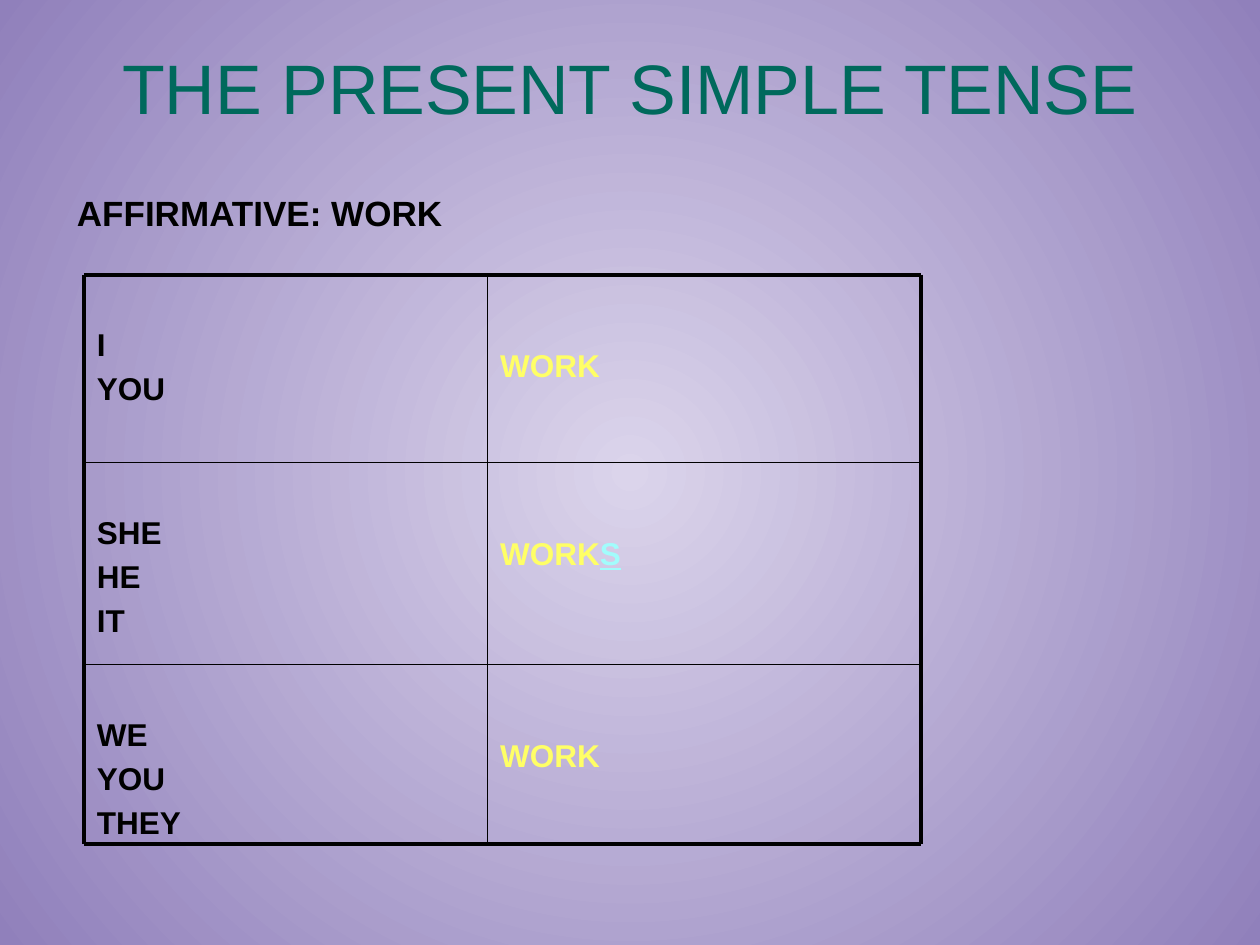
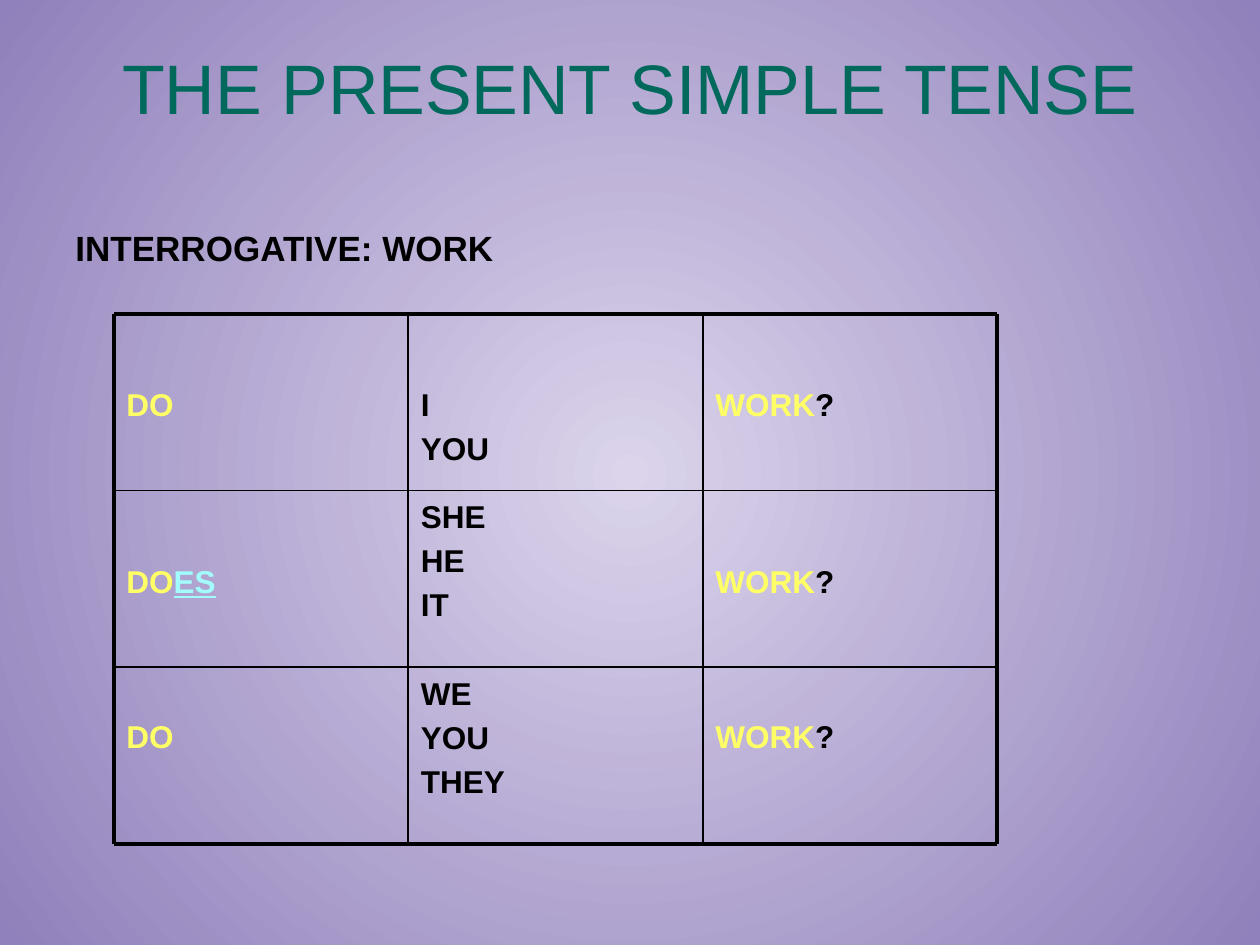
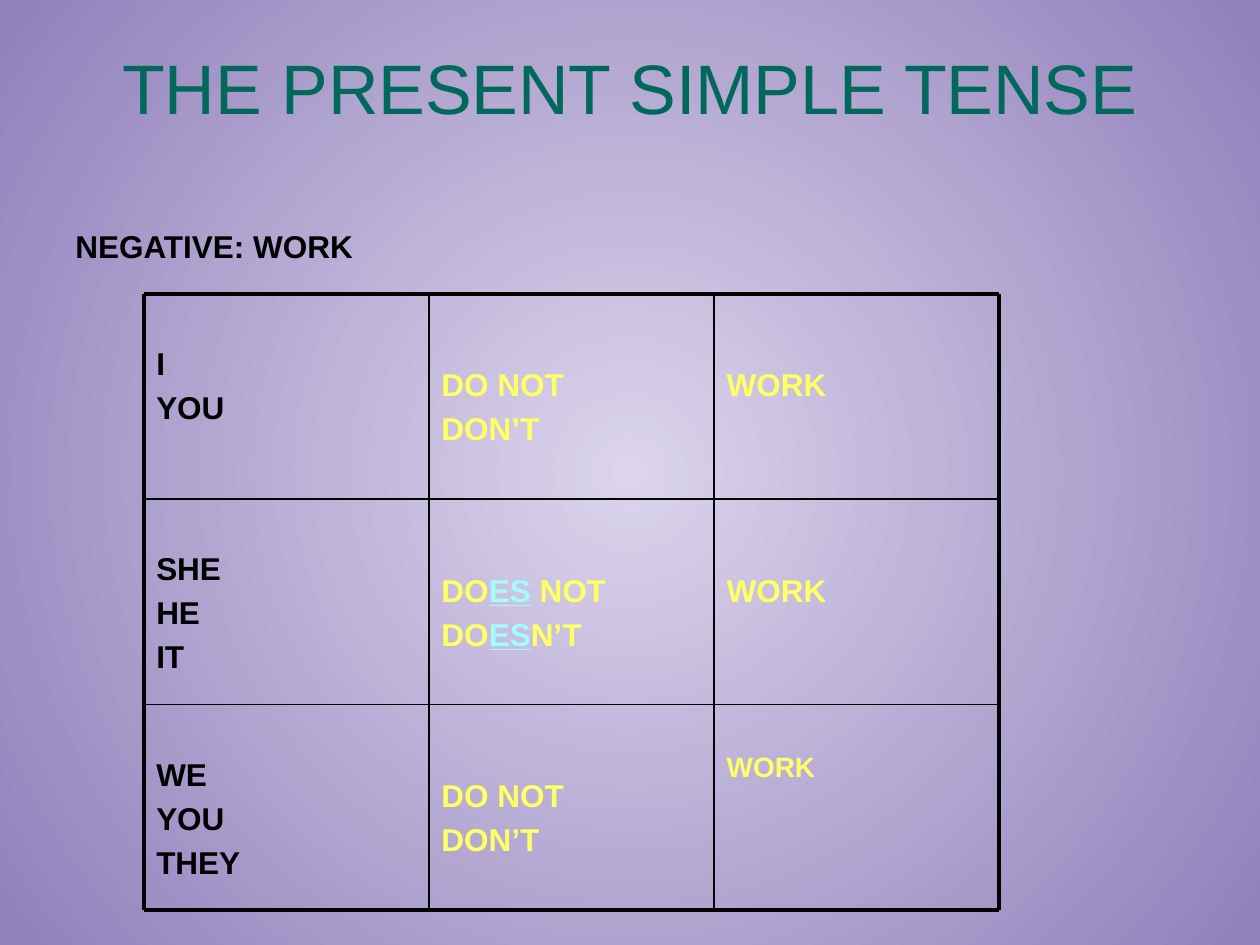
"""Build three slides on the present simple tense, each with one table of verb forms."""
from itertools import accumulate

from pptx import Presentation
from pptx.dml.color import RGBColor
from pptx.enum import shapes, text
from pptx.oxml import ns, xmlchemy
from pptx.util import Pt

COLOURS = {
    "title": "00695C", "subject": "000000", "verb": "FFFF66", "ending": "A2FCFC",
    "rule": "000000", "centre": "DBD4EB", "edge": "9080BB",
}
FONT = "Arial"
TITLE = "THE PRESENT SIMPLE TENSE"
TITLE_BOX = (36, 21.6, 648, 90)
OUTER, INNER = 2.25, 1
LINE_GAP = 5
TOP_INSET = {"top": 5.5, "small": 27.3, "middle": 30.3, "low": 42.4}


def subjects(inset, *names):
    return inset, 18, [[(name, "subject")] for name in names]


def verbs(inset, *lines, size=18):
    return inset, size, [[(line, "verb")] if isinstance(line, str) else line for line in lines]


QUESTION = [("WORK", "verb"), ("?", "subject")]
DOES = [("DO", "verb"), ("ES", "ending")]
WORKS = [("WORK", "verb"), ("S", "ending")]

I_YOU = ("I", "YOU")
SHE_HE_IT = ("SHE", "HE", "IT")
WE_YOU_THEY = ("WE", "YOU", "THEY")

SLIDES = [
    {
        "heading": "AFFIRMATIVE: WORK", "heading_size": 20,
        "heading_box": (36.9, 105.8, 316.8, 376.6),
        "origin": (48.2, 157), "columns": [230.4, 247.7], "rows": [107.3, 115.5, 102.6],
        "cells": [
            [subjects("middle", *I_YOU), verbs("low", "WORK")],
            [subjects("middle", *SHE_HE_IT), verbs("low", WORKS)],
            [subjects("middle", *WE_YOU_THEY), verbs("low", "WORK")],
        ],
    },
    {
        "heading": "INTERROGATIVE: WORK", "heading_size": 20,
        "heading_box": (36, 126, 318.2, 356.4),
        "origin": (65, 179.3), "columns": [168.3] * 3, "rows": [101] * 3,
        "cells": [
            [verbs("low", "DO"), subjects("low", *I_YOU), verbs("low", QUESTION)],
            [verbs("low", DOES), subjects("top", *SHE_HE_IT), verbs("low", QUESTION)],
            [verbs("middle", "DO"), subjects("top", *WE_YOU_THEY), verbs("middle", QUESTION)],
        ],
    },
    {
        "heading": "NEGATIVE: WORK", "heading_size": 18,
        "heading_box": (36, 126, 318.2, 356.4),
        "origin": (82.1, 168), "columns": [163] * 3, "rows": [117.3] * 3,
        "cells": [
            [subjects("middle", *I_YOU), verbs("low", "DO NOT", "DON’T"), verbs("low", "WORK")],
            [subjects("middle", *SHE_HE_IT),
             verbs("low", DOES + [(" NOT", "verb")], DOES + [("N’T", "verb")]),
             verbs("low", "WORK")],
            [subjects("middle", *WE_YOU_THEY), verbs("low", "DO NOT", "DON’T"),
             verbs("small", "WORK", size=16)],
        ],
    },
]


def apply(target, **values):
    for key, value in values.items():
        setattr(target, key, value)


def place(shape, box):
    left, top, width, height = map(Pt, box)
    apply(shape, left=left, top=top, width=width, height=height)


def write(frame, lines, size, bold=True, align=text.PP_ALIGN.LEFT):
    for number, runs in enumerate(lines):
        paragraph = frame.add_paragraph() if number else frame.paragraphs[0]
        paragraph.alignment = align
        if number:
            paragraph.space_before = Pt(LINE_GAP)
        for words, role in runs:
            run = paragraph.add_run()
            run.text = words
            apply(run.font, name=FONT, size=Pt(size), bold=bold, underline=role == "ending")
            run.font.color.rgb = RGBColor.from_string(COLOURS[role])


def child(parent, tag, **attributes):
    element = xmlchemy.OxmlElement(tag)
    for key, value in attributes.items():
        element.set(key, str(value))
    parent.append(element)
    return element


def paint_background(master):
    fill = master.background.fill
    fill.gradient()
    for stop, role in zip(fill.gradient_stops, ("centre", "edge")):
        stop.color.rgb = RGBColor.from_string(COLOURS[role])
    linear = next(master.element.iter(ns.qn("a:lin")))
    gradient = linear.getparent()
    gradient.remove(linear)
    circle = child(gradient, "a:path", path="circle")
    child(circle, "a:fillToRect", l=50000, t=50000, r=50000, b=50000)


def clear_borders(cell):
    properties = cell._tc.get_or_add_tcPr()
    for side in "LRTB":
        child(child(properties, f"a:ln{side}", w=0), "a:noFill")


def add_forms(slide, content):
    cells, widths, heights = (content[key] for key in ("cells", "columns", "rows"))
    box = (*content["origin"], sum(widths), sum(heights))
    forms = slide.shapes.add_table(len(heights), len(widths), *map(Pt, box)).table
    apply(forms, first_row=False, horz_banding=False)
    for column, width in zip(forms.columns, widths):
        column.width = Pt(width)
    for row, height in zip(forms.rows, heights):
        row.height = Pt(height)
    for r, row in enumerate(cells):
        for c, (inset, size, lines) in enumerate(row):
            cell = forms.cell(r, c)
            apply(cell, margin_left=Pt(7.2), margin_right=Pt(7.2), margin_bottom=0,
                  margin_top=Pt(TOP_INSET[inset]), vertical_anchor=text.MSO_ANCHOR.TOP)
            clear_borders(cell)
            cell.fill.background()
            write(cell.text_frame, lines, size)


def add_rule(slide, start, end, weight):
    rule = slide.shapes.add_connector(shapes.MSO_CONNECTOR.STRAIGHT, *map(Pt, start + end))
    rule.line.width = Pt(weight)
    rule.line.color.rgb = RGBColor.from_string(COLOURS["rule"])
    child(rule._element.spPr, "a:effectLst")


def add_rules(slide, content):
    left, top = content["origin"]
    xs = list(accumulate(content["columns"], initial=left))
    ys = list(accumulate(content["rows"], initial=top))
    for y in ys:
        add_rule(slide, (xs[0], y), (xs[-1], y), OUTER if y in (ys[0], ys[-1]) else INNER)
    for x in xs:
        add_rule(slide, (x, ys[0]), (x, ys[-1]), OUTER if x in (xs[0], xs[-1]) else INNER)


def add_slide(deck, content):
    slide = deck.slides.add_slide(deck.slide_layouts[5])
    title = slide.shapes.title
    place(title, TITLE_BOX)
    heading = slide.shapes.add_textbox(*map(Pt, content["heading_box"]))
    for shape in (title, heading):
        apply(shape.text_frame, word_wrap=True, auto_size=text.MSO_AUTO_SIZE.NONE,
              vertical_anchor=text.MSO_ANCHOR.TOP, margin_top=Pt(3.6))
    write(title.text_frame, [[(TITLE, "title")]], 40, False, text.PP_ALIGN.CENTER)
    write(heading.text_frame, [[(content["heading"], "subject")]], content["heading_size"])
    add_forms(slide, content)
    add_rules(slide, content)


def main():
    deck = Presentation()
    apply(deck, slide_width=Pt(720), slide_height=Pt(540))
    paint_background(deck.slide_master)
    for content in SLIDES:
        add_slide(deck, content)
    deck.save("out.pptx")


if __name__ == "__main__":
    main()
